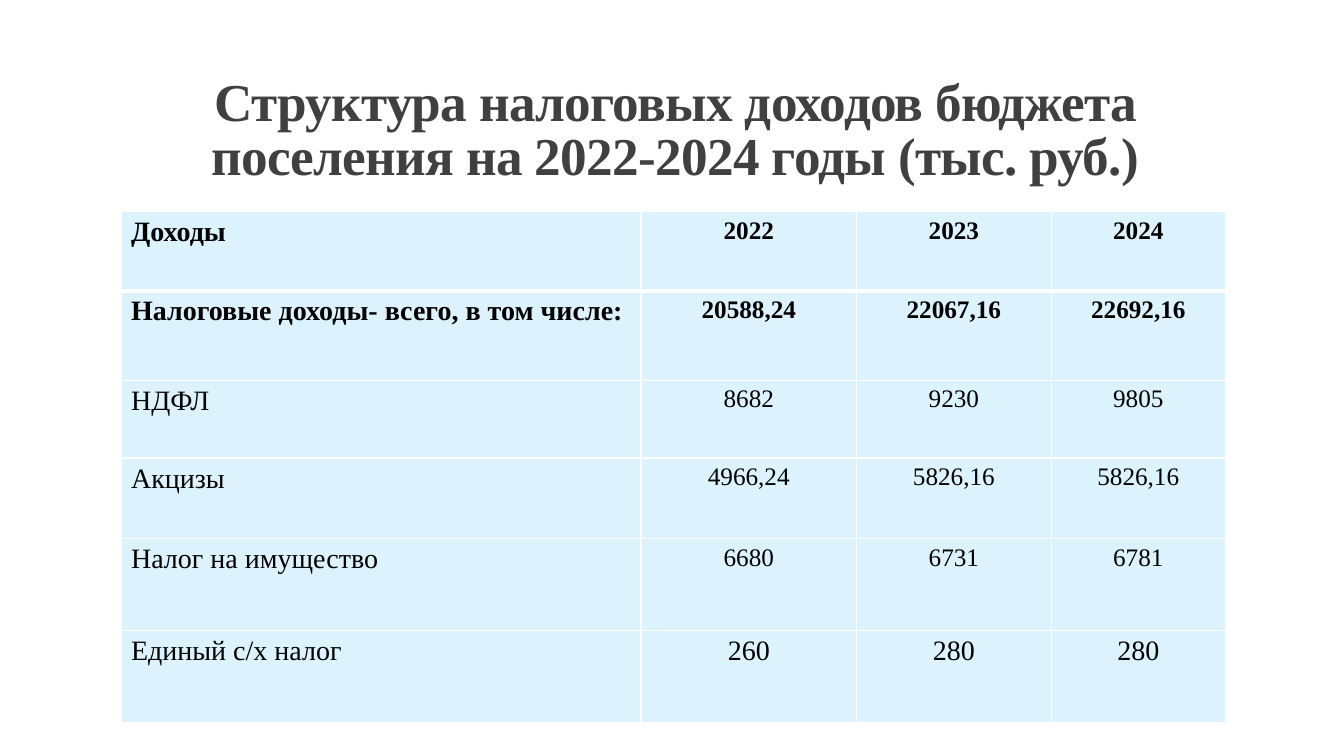
from lxml.etree import SubElement
from pptx import Presentation
from pptx.dml.color import RGBColor
from pptx.enum.text import MSO_ANCHOR, MSO_AUTO_SIZE, PP_ALIGN
from pptx.oxml.ns import qn
from pptx.util import Pt

FONT = "Times New Roman"
TITLE = "Структура налоговых доходов бюджета поселения на 2022-2024 годы (тыс. руб.)"
ROWS = [
    ("Доходы", "2022", "2023", "2024"),
    ("Налоговые доходы- всего, в том числе:", "20588,24", "22067,16", "22692,16"),
    ("НДФЛ", "8682", "9230", "9805"),
    ("Акцизы", "4966,24", "5826,16", "5826,16"),
    ("Налог на имущество", "6680", "6731", "6781"),
    ("Единый с/х налог", "260", "280", "280"),
]
COL_WIDTHS = [371.5, 154, 139, 124.5]
ROW_HEIGHTS = [56.5, 64, 55.5, 57.5, 65.5, 66]
BOLD_ROWS = 2
LEFT = 86.4


def rgb(color):
    return RGBColor.from_string(color)


def format_paragraph(p, size, color, bold, align):
    p.alignment = align
    p.font.name, p.font.size, p.font.bold = FONT, Pt(size), bold
    p.font.color.rgb = rgb(color)


def add_borders(cell, color, widths):
    tc_pr = cell._tc.get_or_add_tcPr()
    for side, width in widths.items():
        ln = SubElement(tc_pr, qn(f"a:ln{side}"), w=str(Pt(width)))
        fill = SubElement(ln, qn("a:solidFill"))
        SubElement(fill, qn("a:srgbClr"), val=color)


def add_title(s):
    sp = s.shapes.title
    sp.left, sp.top, sp.width, sp.height = Pt(LEFT), Pt(22.5), Pt(792), Pt(114.5)
    tf = sp.text_frame
    tf.text = TITLE
    tf.word_wrap = True
    tf.auto_size = MSO_AUTO_SIZE.NONE
    tf.vertical_anchor = MSO_ANCHOR.BOTTOM
    p = tf.paragraphs[0]
    p.line_spacing = 0.85
    format_paragraph(p, 38, "404040", True, PP_ALIGN.CENTER)
    p.runs[0]._r.get_or_add_rPr().set("spc", "-50")


def add_income_table(s):
    table = s.shapes.add_table(
        len(ROWS), len(COL_WIDTHS), Pt(LEFT), Pt(151.2),
        Pt(sum(COL_WIDTHS)), Pt(sum(ROW_HEIGHTS))).table
    table.first_row = table.horz_banding = False
    for column, width in zip(table.columns, COL_WIDTHS):
        column.width = Pt(width)
    for row, height in zip(table.rows, ROW_HEIGHTS):
        row.height = Pt(height)

    last = len(ROWS) - 1
    for i, values in enumerate(ROWS):
        top, bottom = (3 if i == 1 else 1), (3 if i == 0 else 1)
        for j, value in enumerate(values):
            cell = table.cell(i, j)
            add_borders(cell, "FFFFFF", {"L": 1, "R": 1, "T": top, "B": bottom})
            cell.fill.solid()
            cell.fill.fore_color.rgb = rgb("DCF3FE")
            cell.text = value
            size = 20 if j == 0 or i == last else 18
            align = PP_ALIGN.LEFT if j == 0 else PP_ALIGN.CENTER
            format_paragraph(cell.text_frame.paragraphs[0], size, "000000",
                             i < BOLD_ROWS, align)


def main():
    prs = Presentation()
    prs.slide_width, prs.slide_height = Pt(960), Pt(540)
    s = prs.slides.add_slide(prs.slide_layouts.get_by_name("Title Only"))
    add_title(s)
    add_income_table(s)
    prs.save("out.pptx")


if __name__ == "__main__":
    main()
